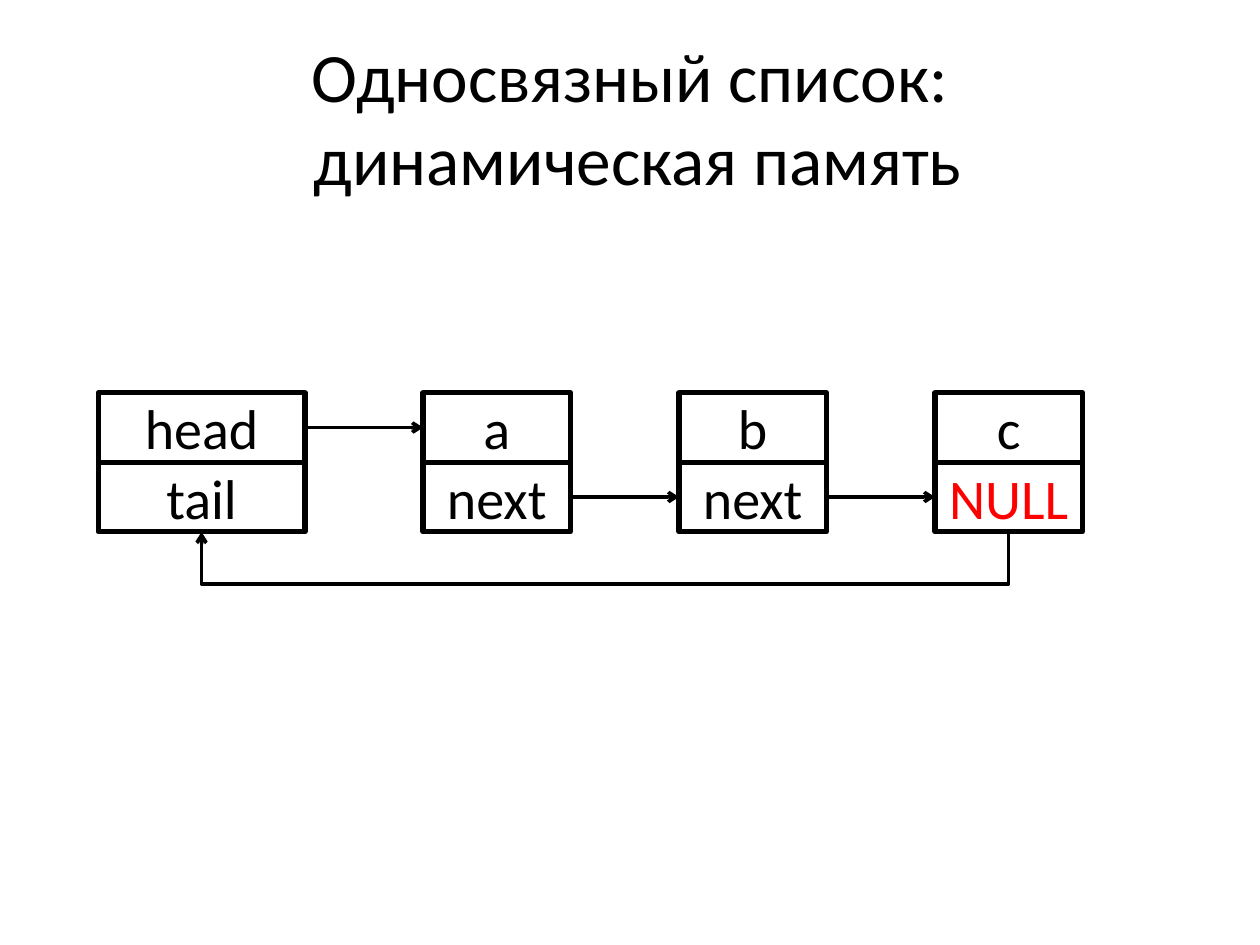
from dataclasses import dataclass

from lxml import etree
from pptx import Presentation
from pptx.dml.color import RGBColor
from pptx.enum.shapes import MSO_CONNECTOR, MSO_SHAPE
from pptx.enum.text import MSO_ANCHOR, PP_ALIGN
from pptx.oxml.ns import qn
from pptx.shapes.autoshape import Shape
from pptx.shapes.connector import Connector
from pptx.shapes.shapetree import SlideShapes
from pptx.text.text import TextFrame
from pptx.util import Cm, Pt

BLACK = RGBColor(0x00, 0x00, 0x00)
RED = RGBColor(0xFF, 0x00, 0x00)
RECTANGLE = MSO_SHAPE.RECTANGLE
STRAIGHT = MSO_CONNECTOR.STRAIGHT
ELBOW = MSO_CONNECTOR.ELBOW
CENTER = PP_ALIGN.CENTER
MIDDLE = MSO_ANCHOR.MIDDLE

FONT = "Calibri"
LIST_TOP = Cm(7.92)
CELL_HEIGHT = Cm(1.4)
FIRST_NODE_LEFT = Cm(8.53)
NODE_STEP = Cm(5.16)
NODE_WIDTH = Cm(2.97)
TAIL_DROP = Cm(1.06)
BEND_WIDTH = Cm(0.01)
BOTTOM_SITE, RIGHT_SITE, LEFT_SITE = 2, 3, 1


@dataclass(frozen=True)
class Record:
    left: int
    width: int
    upper: str
    lower: str
    lower_color: RGBColor = BLACK


def style_text(frame: TextFrame, size: float, color: RGBColor) -> None:
    frame.word_wrap = True
    frame.vertical_anchor = MIDDLE
    for paragraph in frame.paragraphs:
        paragraph.alignment = CENTER
        paragraph.font.name = FONT
        paragraph.font.size = Pt(size)
        paragraph.font.color.rgb = color


def draw_cell(shapes: SlideShapes, record: Record, row: int,
              label: str, color: RGBColor) -> Shape:
    cell = shapes.add_shape(RECTANGLE, record.left, LIST_TOP + row * CELL_HEIGHT,
                            record.width, CELL_HEIGHT)
    cell.shadow.inherit = False
    cell.fill.background()
    cell.line.color.rgb = BLACK
    cell.line.width = Pt(3)
    cell.text_frame.text = label
    style_text(cell.text_frame, 32, color)
    return cell


def draw_record(shapes: SlideShapes, record: Record) -> tuple[Shape, Shape]:
    return (draw_cell(shapes, record, 0, record.upper, BLACK),
            draw_cell(shapes, record, 1, record.lower, record.lower_color))


def draw_pointer(shapes: SlideShapes, kind: int, source: Shape, source_site: int,
                 target: Shape, target_site: int) -> Connector:
    pointer = shapes.add_connector(kind, 0, 0, 0, 0)
    pointer.begin_connect(source, source_site)
    pointer.end_connect(target, target_site)
    pointer.line.color.rgb = BLACK
    pointer.line.width = Pt(2)
    etree.SubElement(pointer.line._get_or_add_ln(), qn("a:tailEnd"), type="arrow")
    etree.SubElement(pointer._element.spPr, qn("a:effectLst"))
    return pointer


def route_below(pointer: Connector) -> None:
    start_x, end_x, bottom = pointer.begin_x, pointer.end_x, pointer.begin_y
    span = end_x - start_x
    properties = pointer._element.spPr
    transform = properties.find(qn("a:xfrm"))
    transform.set("rot", str(270 * 60000))
    transform.set("flipH", "1")
    pointer.left = (start_x + end_x - BEND_WIDTH) // 2
    pointer.top = bottom - span // 2
    pointer.width, pointer.height = BEND_WIDTH, span
    adjustments = properties.find(qn("a:prstGeom")).find(qn("a:avLst"))
    bend = round(TAIL_DROP / BEND_WIDTH * 100000)
    etree.SubElement(adjustments, qn("a:gd"), name="adj1", fmla=f"val {bend}")


def main() -> None:
    presentation = Presentation()
    presentation.slide_width, presentation.slide_height = Cm(25.4), Cm(19.05)
    shapes = presentation.slides.add_slide(presentation.slide_layouts[6]).shapes

    title = shapes.add_textbox(Cm(1.27), Cm(0.76), Cm(22.86), Cm(3.18)).text_frame
    title.text = "Односвязный список:\v динамическая память"
    style_text(title, 39.6, BLACK)

    head, tail = draw_record(shapes, Record(Cm(1.98), Cm(4.17), "head", "tail"))
    contents = [("a", "next", BLACK), ("b", "next", BLACK), ("c", "NULL", RED)]
    nodes = [
        draw_record(shapes, Record(FIRST_NODE_LEFT + index * NODE_STEP, NODE_WIDTH, *content))
        for index, content in enumerate(contents)
    ]

    draw_pointer(shapes, STRAIGHT, head, RIGHT_SITE, nodes[0][0], LEFT_SITE)
    for (_, link), (_, following) in zip(nodes, nodes[1:]):
        draw_pointer(shapes, STRAIGHT, link, RIGHT_SITE, following, LEFT_SITE)
    route_below(draw_pointer(shapes, ELBOW, tail, BOTTOM_SITE, nodes[-1][1], BOTTOM_SITE))

    presentation.save("out.pptx")


if __name__ == "__main__":
    main()
